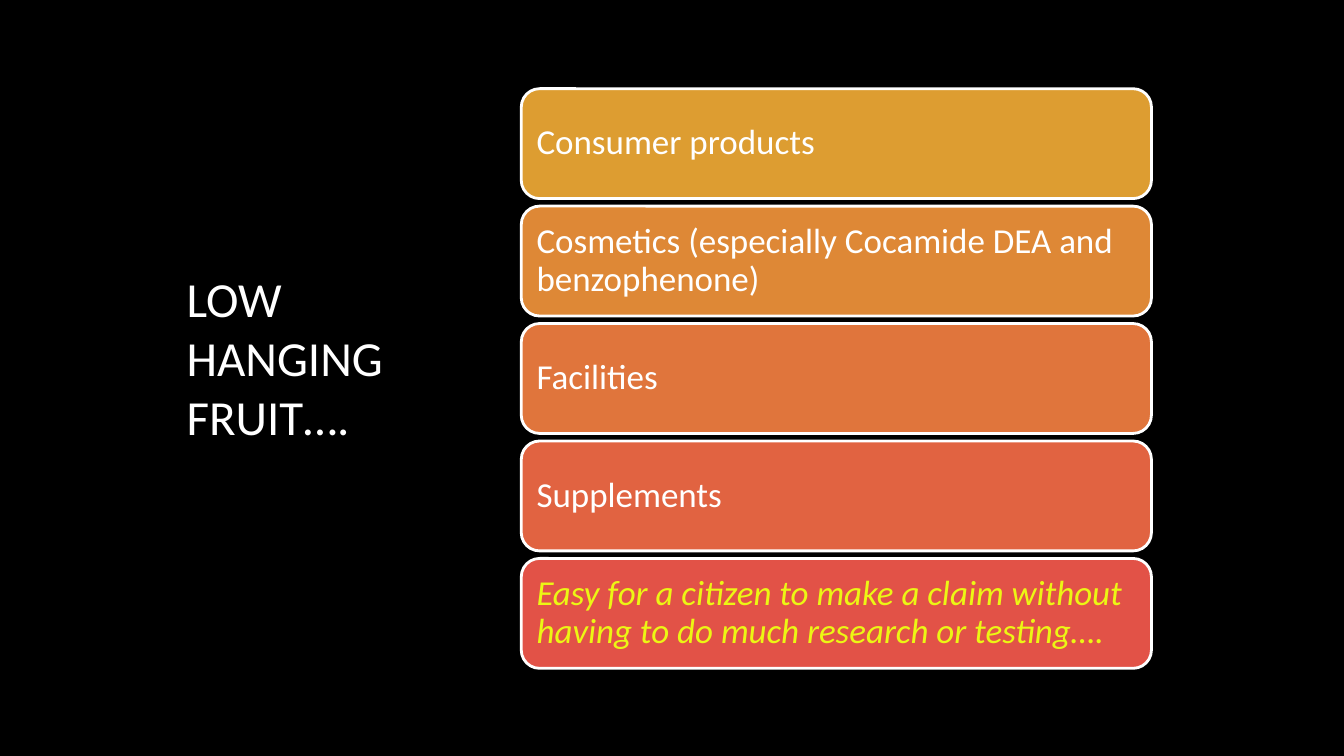
import pptx
import pptx.util
import pptx.dml.color
import pptx.enum.shapes
import pptx.enum.text

Inches = pptx.util.Inches
Pt = pptx.util.Pt

COLORS = {
    "background": "000000",
    "white": "FFFFFF",
    "yellow": "ECF614",
    "gold": "DD9D31",
    "amber": "DE8836",
    "orange": "E0753C",
    "coral": "E16341",
    "red": "E25247",
}

TARGETS = [
    ("Consumer products", "gold", {}),
    ("Cosmetics (especially Cocamide DEA and benzophenone)", "amber", {}),
    ("Facilities", "orange", {}),
    ("Supplements", "coral", {}),
    ("Easy for a citizen to make a claim without having to do much research or testing….",
     "red", {"color": "yellow", "italic": True}),
]
FIRST_TOP, PITCH = 0.88, 1.165


def rgb(name):
    return pptx.dml.color.RGBColor.from_string(COLORS[name])


class SlideBuilder:
    """Holds the text style and the slide being built."""

    font_name = "Calibri"

    def __init__(self, slide):
        self.slide = slide

    def background(self, color):
        fill = self.slide.background.fill
        fill.solid()
        fill.fore_color.rgb = rgb(color)

    def set_text(self, shape, text, size, color="white", line_spacing=1.0, **font_format):
        frame = shape.text_frame
        frame_format = {
            "word_wrap": True,
            "auto_size": pptx.enum.text.MSO_AUTO_SIZE.NONE,
            "vertical_anchor": pptx.enum.text.MSO_ANCHOR.MIDDLE,
        }
        for name, value in frame_format.items():
            setattr(frame, name, value)
        paragraph = frame.paragraphs[0]
        paragraph.alignment = pptx.enum.text.PP_ALIGN.LEFT
        paragraph.line_spacing = line_spacing
        run = paragraph.add_run()
        run.text = text
        run.font.color.rgb = rgb(color)
        for name, value in {"name": self.font_name, "size": Pt(size), **font_format}.items():
            setattr(run.font, name, value)

    def title(self, text, left, top, width, height):
        heading = self.slide.shapes.title
        place = {"left": left, "top": top, "width": width, "height": height}
        for name, value in place.items():
            setattr(heading, name, Inches(value))
        self.set_text(heading, text, 35)

    def bar(self, text, fill, left, top, width, height, **text_format):
        bar = self.slide.shapes.add_shape(
            pptx.enum.shapes.MSO_SHAPE.ROUNDED_RECTANGLE,
            Inches(left), Inches(top), Inches(width), Inches(height))
        bar.shadow.inherit = False
        bar.fill.solid()
        bar.fill.fore_color.rgb = rgb(fill)
        bar.line.color.rgb = rgb("white")
        bar.line.width = Pt(2)
        for side in ("left", "top", "right", "bottom"):
            setattr(bar.text_frame, f"margin_{side}", Inches(0.1))
        self.set_text(bar, text, 25, line_spacing=0.9, **text_format)


def main():
    deck = pptx.Presentation()
    deck.slide_width, deck.slide_height = Inches(13.33), Inches(7.5)
    builder = SlideBuilder(deck.slides.add_slide(deck.slide_layouts.get_by_name("Title Only")))
    builder.background("background")
    builder.title("LOW HANGING FRUIT….", 1.75, 0.75, 2.86, 5.58)
    for index, (target, fill, text_format) in enumerate(TARGETS):
        builder.bar(target, fill, 5.17, FIRST_TOP + index * PITCH, 6.25, 1.09, **text_format)
    deck.save("out.pptx")


if __name__ == "__main__":
    main()
